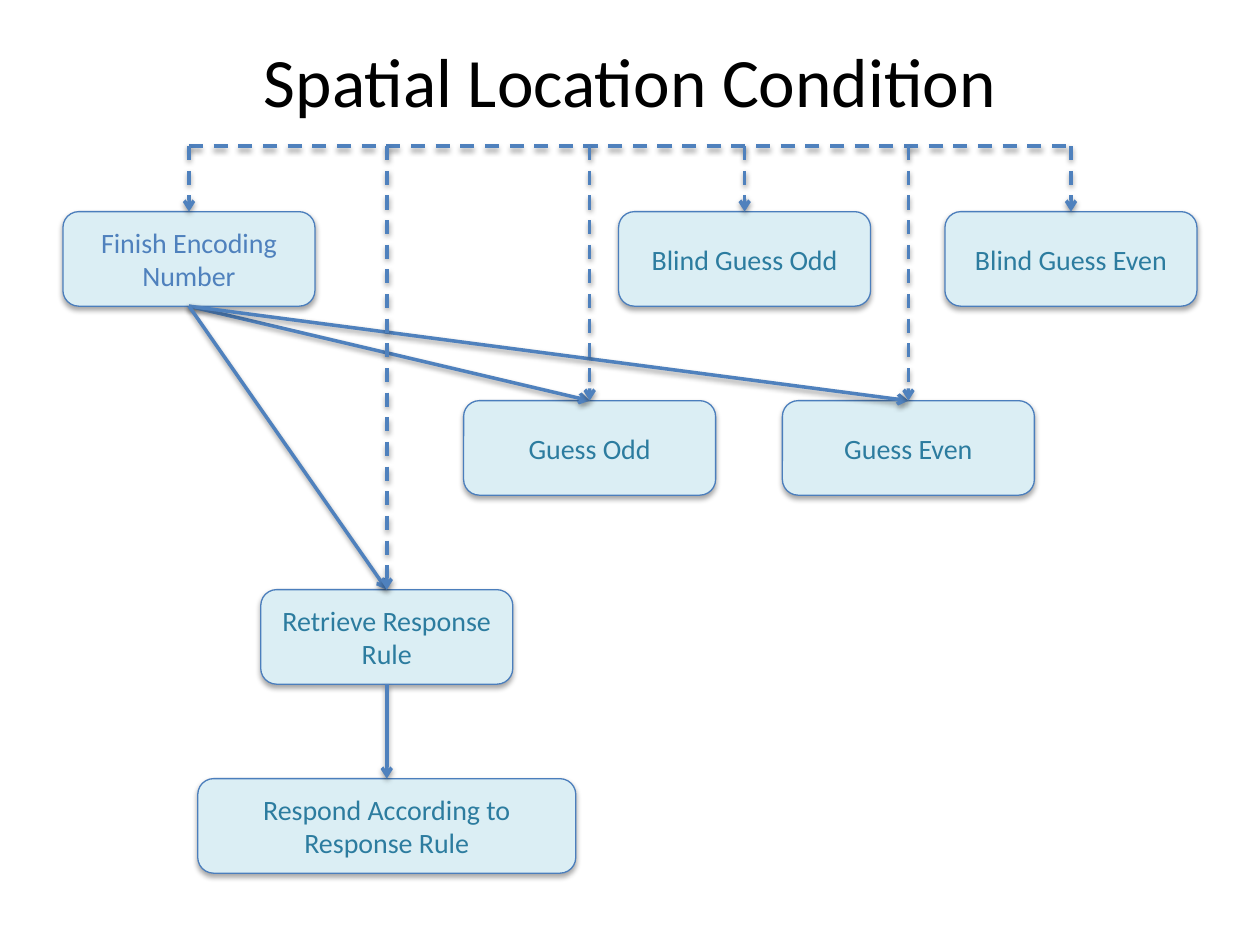
from dataclasses import dataclass

from lxml import etree
from pptx import Presentation
from pptx import util as u
from pptx.dml.color import RGBColor
from pptx.enum import dml, shapes, text
from pptx.oxml import ns

Inches = u.Inches


@dataclass(frozen=True)
class Theme:
    font: str = "Calibri"
    title_size: float = 39.6
    label_size: float = 16
    border_width: float = 0.75
    arrow_width: float = 2
    title: str = "000000"
    label: str = "2C7C9F"
    start_label: str = "4F81BD"
    box_fill: str = "DBEEF4"
    border: str = "4B7EBC"
    arrow: str = "4F81BD"
    shadow: str = "000000"


THEME = Theme()
TITLE_AREA = (0.5, 0.3, 9, 1.25)
BOX_WIDTH, BOX_HEIGHT = 2, 0.75
FIRST_ROW, ROW_STEP = 1.68, 1.5
BUS_TOP = 1.16

START = "Finish Encoding Number"
RETRIEVE = "Retrieve Response Rule"
RESPOND = "Respond According to Response Rule"

# label: (centre, row, width)
STEPS = {
    START: (1.5, 0, BOX_WIDTH),
    "Blind Guess Odd": (5.91, 0, BOX_WIDTH),
    "Blind Guess Even": (8.5, 0, BOX_WIDTH),
    RETRIEVE: (3.07, 2, BOX_WIDTH),
    RESPOND: (3.07, 3, 3),
    "Guess Odd": (4.68, 1, BOX_WIDTH),
    "Guess Even": (7.21, 1, BOX_WIDTH),
}
FLOWS = [(START, "Guess Odd"), (START, "Guess Even"),
         (START, RETRIEVE), (RETRIEVE, RESPOND)]
TOP_SITE, BOTTOM_SITE = 0, 2


def color(value):
    return RGBColor.from_string(value)


def style_text(para, size, ink):
    para.alignment = text.PP_ALIGN.CENTER
    para.font.name = THEME.font
    para.font.size = u.Pt(size)
    para.font.color.rgb = color(ink)


def add_shadow(effects, opacity, blur, distance):
    """Fill an effect list with a soft shadow that falls straight down."""
    shadow = etree.SubElement(
        effects, ns.qn("a:outerShdw"), blurRad=str(u.Pt(blur)),
        dist=str(u.Pt(distance)), dir="5400000", rotWithShape="0")
    ink = etree.SubElement(shadow, ns.qn("a:srgbClr"), val=THEME.shadow)
    etree.SubElement(ink, ns.qn("a:alpha"), val=str(opacity * 1000))


def place_title(page, area, wording):
    title = page.shapes.title
    title.left, title.top, title.width, title.height = map(Inches, area)
    frame = title.text_frame
    frame.text = wording
    frame.vertical_anchor = text.MSO_ANCHOR.TOP
    frame.margin_top = 0
    style_text(frame.paragraphs[0], THEME.title_size, THEME.title)


def place_step(page, area, label):
    box = page.shapes.add_shape(
        shapes.MSO_SHAPE.ROUNDED_RECTANGLE, *map(Inches, area))
    box.fill.solid()
    box.fill.fore_color.rgb = color(THEME.box_fill)
    box.line.color.rgb = color(THEME.border)
    box.line.width = u.Pt(THEME.border_width)
    box.shadow.inherit = False
    add_shadow(box.element.spPr.find(ns.qn("a:effectLst")), 35, 3.1, 1.8)
    frame = box.text_frame
    frame.word_wrap = True
    frame.vertical_anchor = text.MSO_ANCHOR.MIDDLE
    frame.text = label
    ink = THEME.start_label if label == START else THEME.label
    style_text(frame.paragraphs[0], THEME.label_size, ink)
    return box


def place_line(page, begin, end, dashed=False, arrow=True):
    line = page.shapes.add_connector(
        shapes.MSO_CONNECTOR.STRAIGHT, *map(Inches, begin + end))
    line.line.color.rgb = color(THEME.arrow)
    line.line.width = u.Pt(THEME.arrow_width)
    if dashed:
        line.line.dash_style = dml.MSO_LINE.DASH
    properties = line.element.spPr
    if arrow:
        etree.SubElement(properties.find(ns.qn("a:ln")),
                         ns.qn("a:tailEnd"), type="arrow")
    add_shadow(etree.SubElement(properties, ns.qn("a:effectLst")), 38, 3.1, 1.6)
    return line


def place_flowchart(page, first_row, bus_top):
    """Draw the steps, the flows between them and the dashed bus above."""
    def top_of(label):
        centre, row, _ = STEPS[label]
        return centre, first_row + row * ROW_STEP

    boxes = {}
    for label, (centre, _, width) in STEPS.items():
        area = (centre - width / 2, top_of(label)[1], width, BOX_HEIGHT)
        boxes[label] = place_step(page, area, label)

    for source, target in FLOWS:
        centre, top = top_of(source)
        line = place_line(page, (centre, top + BOX_HEIGHT), top_of(target))
        line.begin_connect(boxes[source], BOTTOM_SITE)
        line.end_connect(boxes[target], TOP_SITE)

    fed = [label for label in STEPS if label != RESPOND]
    centres = [STEPS[label][0] for label in fed]
    place_line(page, (min(centres), bus_top), (max(centres), bus_top),
               dashed=True, arrow=False)
    for label, centre in zip(fed, centres):
        drop = place_line(page, (centre, bus_top), top_of(label), dashed=True)
        drop.end_connect(boxes[label], TOP_SITE)


def main():
    deck = Presentation()
    deck.slide_width, deck.slide_height = Inches(10), Inches(7.5)
    page = deck.slides.add_slide(deck.slide_layouts.get_by_name("Title Only"))
    place_title(page, TITLE_AREA, "Spatial Location Condition")
    place_flowchart(page, FIRST_ROW, BUS_TOP)
    deck.save("out.pptx")


if __name__ == "__main__":
    main()
